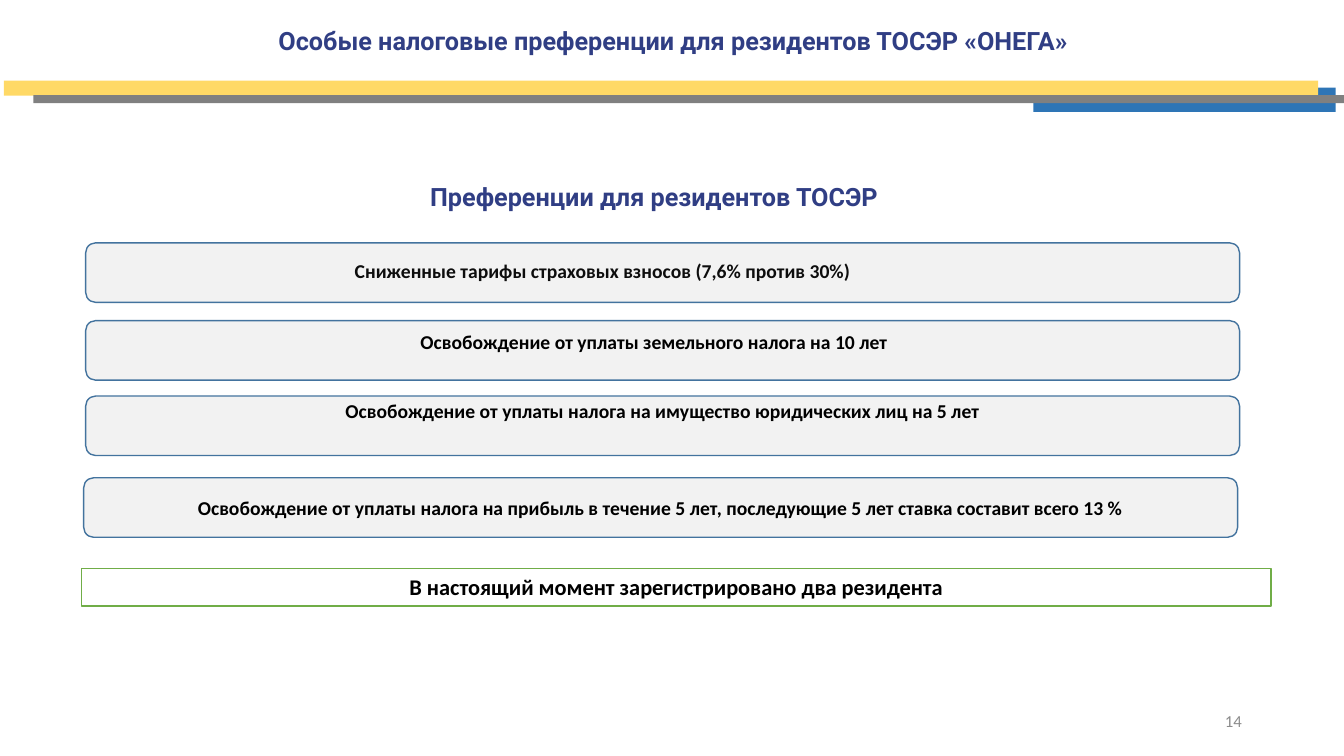
from pptx import Presentation
from pptx import util as u
from pptx.dml.color import RGBColor
from pptx.enum import shapes, text


class Theme:
    navy, black, ink, pale = "303E84", "000000", "0D0D0D", "8C8C8C"
    blue, gold, gray = "2E75B6", "FFD966", "808080"
    card, edge, white, green = "F2F2F2", "43739E", "FFFFFF", "70AD47"
    head, note, item, page = 18, 16, 14, 12
    title, body = "Roboto", "Calibri"


Kind = shapes.MSO_SHAPE
Align = text.PP_ALIGN
Anchor = text.MSO_ANCHOR


def write(shape, words, size=Theme.item, color=Theme.black, font=Theme.body,
          bold=True, align=Align.CENTER, anchor=Anchor.TOP):
    frame = shape.text_frame
    frame.word_wrap = True
    frame.vertical_anchor = anchor
    para = frame.paragraphs[0]
    para.alignment = align
    run = para.add_run()
    run.text = words
    run.font.size = u.Pt(size)
    run.font.name = font
    run.font.bold = bold
    run.font.color.rgb = RGBColor.from_string(color)
    return para


def block(kind, area, fill, line=None):
    shape = slide.shapes.add_shape(kind, *map(u.Cm, area))
    shape.shadow.inherit = False
    shape.fill.solid()
    shape.fill.fore_color.rgb = RGBColor.from_string(fill)
    if line:
        shape.line.color.rgb = RGBColor.from_string(line)
        shape.line.width = u.Pt(1)
    else:
        shape.line.fill.background()
    return shape


deck = Presentation()
deck.slide_width, deck.slide_height = u.Cm(33.87), u.Cm(19.05)
slide = deck.slides.add_slide(deck.slide_layouts[5])

# Title
title = slide.shapes.title
title.left, title.top = u.Cm(1.83), u.Cm(0.33)
title.width, title.height = u.Cm(30.43), u.Cm(1.45)
para = write(title, "Особые налоговые преференции для резидентов ТОСЭР «ОНЕГА» ",
             size=Theme.head, color=Theme.navy, font=Theme.title,
             anchor=Anchor.MIDDLE)
para.line_spacing = 0.9

# Stripes under the title
for area, fill in (
    ((26.04, 2.21, 7.62, 0.61), Theme.blue),
    ((0.1, 2.03, 33.12, 0.38), Theme.gold),
    ((0.84, 2.4, 33.12, 0.2), Theme.gray),
):
    block(Kind.RECTANGLE, area, fill)

# Cards
cards = [block(Kind.ROUNDED_RECTANGLE, (left, top, 29.08, 1.5),
               Theme.card, Theme.edge)
         for left, top in ((2.16, 6.12), (2.16, 8.08), (2.16, 9.98), (2.11, 12.04))]
write(cards[-1], "Освобождение от уплаты налога на прибыль в течение 5 лет, "
      "последующие 5 лет ставка составит всего 13 %", anchor=Anchor.MIDDLE)

# Heading, card captions and page number
for area, words, form in (
    ((7.62, 4.45, 17.73, 1.02), "Преференции для резидентов ТОСЭР",
     dict(size=Theme.head, color=Theme.navy, font=Theme.title)),
    ((8.69, 6.4, 23.24, 0.86), "Сниженные тарифы страховых взносов (7,6% против 30%)",
     dict(color=Theme.ink, align=Align.JUSTIFY)),
    ((2.16, 8.2, 28.65, 1.45), "Освобождение от уплаты земельного налога на 10 лет", {}),
    ((2.16, 9.93, 29.08, 0.86),
     "Освобождение от уплаты налога на имущество юридических лиц на 5 лет", {}),
    ((23.93, 17.65, 7.62, 1.02), "14",
     dict(size=Theme.page, color=Theme.pale, bold=False, align=Align.RIGHT,
          anchor=Anchor.MIDDLE)),
):
    write(slide.shapes.add_textbox(*map(u.Cm, area)), words, **form)

# Closing note
note = block(Kind.RECTANGLE, (2.06, 14.33, 29.97, 0.94), Theme.white, Theme.green)
write(note, "В настоящий момент зарегистрировано два резидента", size=Theme.note)

deck.save("out.pptx")
